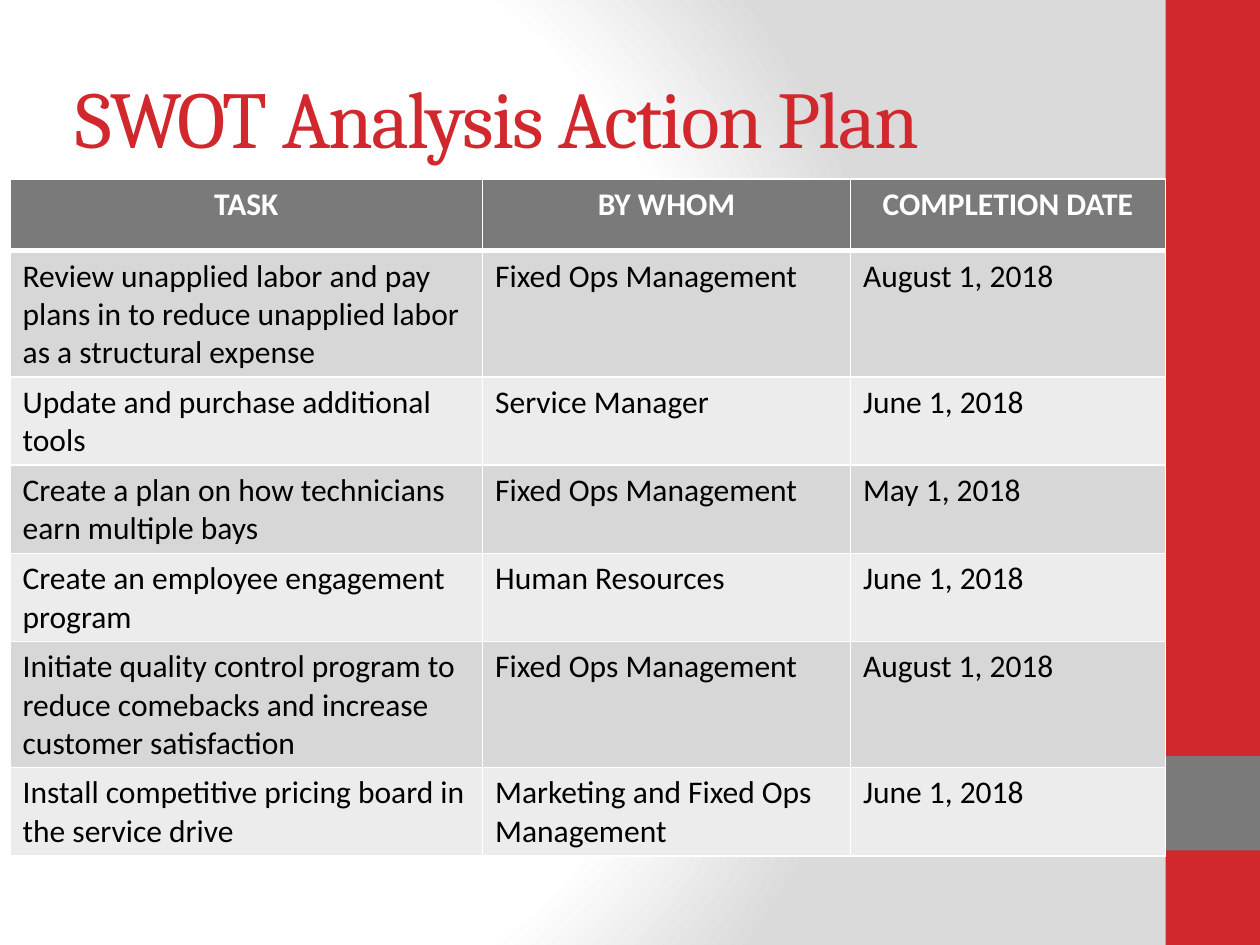
import pptx
import pptx.dml.color
import pptx.enum.shapes
import pptx.enum.text
import pptx.oxml
import pptx.oxml.ns
import pptx.util
from pptx.util import Inches

COLORS = {
    "red": "D1282E",
    "gray": "7A7A7A",
    "white": "FFFFFF",
    "black": "000000",
    "backdrop": "DADADA",
    "odd_row": "D7D7D7",
    "even_row": "ECECEC",
}
HEADERS = ["TASK", "BY WHOM", "COMPLETION DATE"]
ACTIONS = [
    ["Review unapplied labor and pay plans in to reduce unapplied labor as a structural expense",
     "Fixed Ops Management", "August 1, 2018"],
    ["Update and purchase additional tools", "Service Manager", "June 1, 2018"],
    ["Create a plan on how technicians earn multiple bays", "Fixed Ops Management", "May 1, 2018"],
    ["Create an employee engagement program", "Human Resources", "June 1, 2018"],
    ["Initiate quality control program to reduce comebacks and increase customer satisfaction",
     "Fixed Ops Management", "August 1, 2018"],
    ["Install competitive pricing board in the service drive",
     "Marketing and Fixed Ops Management", "June 1, 2018"],
]
COLUMN_WIDTHS = [3.75, 2.92, 2.5]
ROW_HEIGHT = 0.57
ALIGN = pptx.enum.text.PP_ALIGN


def rgb(name):
    return pptx.dml.color.RGBColor.from_string(COLORS[name])


def paint_background(slide):
    """Fill the background with a circular gradient centred left of the middle."""
    slide.background.fill.solid()
    solid = slide.element.find(".//" + pptx.oxml.ns.qn("a:solidFill"))
    stops = "".join(
        f'<a:gs pos="{position * 1000}"><a:srgbClr val="{COLORS[color]}"/></a:gs>'
        for position, color in [(0, "white"), (75, "white"), (100, "backdrop")]
    )
    gradient = pptx.oxml.parse_xml(
        f'<a:gradFill {pptx.oxml.ns.nsdecls("a")} rotWithShape="1"><a:gsLst>{stops}</a:gsLst>'
        '<a:path path="circle"><a:fillToRect l="20000" t="50000" r="100000" b="50000"/></a:path>'
        "</a:gradFill>"
    )
    solid.getparent().replace(solid, gradient)


def add_band(slide, top, height, color):
    band = slide.shapes.add_shape(
        pptx.enum.shapes.MSO_SHAPE.RECTANGLE,
        Inches(9.25), Inches(top), Inches(0.75), Inches(height))
    band.shadow.inherit = False
    band.fill.solid()
    band.fill.fore_color.rgb = rgb(color)
    band.line.fill.background()


def write_text(frame, text, *, font, size, color, bold=False, align=ALIGN.LEFT, spacing=None):
    """Write one formatted paragraph; spacing is between letters, in points."""
    frame.word_wrap = True
    para = frame.paragraphs[0]
    para.alignment = align
    span = para.add_run()
    span.text = text
    span.font.name = font
    span.font.size = pptx.util.Pt(size)
    span.font.bold = bold
    span.font.color.rgb = rgb(color)
    if spacing is not None:
        span.font._element.set("spc", str(spacing * 100))


def add_title(slide, text):
    box = slide.shapes.add_textbox(Inches(0.5), Inches(0.3), Inches(8.33), Inches(1.25))
    box.text_frame.vertical_anchor = pptx.enum.text.MSO_ANCHOR.MIDDLE
    write_text(box.text_frame, text, font="Cambria", size=46, color="red", spacing=-1)


def set_borders(cell, top, bottom):
    """Draw white borders; top and bottom are widths in points."""
    properties = cell._tc.get_or_add_tcPr()
    for index, (side, width) in enumerate([("L", 1), ("R", 1), ("T", top), ("B", bottom)]):
        properties.insert(index, pptx.oxml.parse_xml(
            f'<a:ln{side} {pptx.oxml.ns.nsdecls("a")} w="{pptx.util.Pt(width)}">'
            f'<a:solidFill><a:srgbClr val="{COLORS["white"]}"/></a:solidFill></a:ln{side}>'))


def add_action_table(slide):
    rows = [HEADERS] + ACTIONS
    table = slide.shapes.add_table(
        len(rows), len(HEADERS), Inches(0.08), Inches(1.42),
        Inches(sum(COLUMN_WIDTHS)), Inches(ROW_HEIGHT * len(rows))).table
    for column, width in zip(table.columns, COLUMN_WIDTHS):
        column.width = Inches(width)
    for row_index, texts in enumerate(rows):
        table.rows[row_index].height = Inches(ROW_HEIGHT)
        header = row_index == 0
        fill = "gray" if header else ("odd_row" if row_index % 2 else "even_row")
        for column_index, text in enumerate(texts):
            cell = table.cell(row_index, column_index)
            cell.fill.solid()
            cell.fill.fore_color.rgb = rgb(fill)
            set_borders(cell, top=3 if row_index == 1 else 1, bottom=3 if header else 1)
            write_text(cell.text_frame, text, font="Calibri", size=18, bold=header,
                       color="white" if header else "black",
                       align=ALIGN.CENTER if header else ALIGN.LEFT)


def main():
    deck = pptx.Presentation()
    deck.slide_width, deck.slide_height = Inches(10), Inches(7.5)
    slide = deck.slides.add_slide(deck.slide_layouts[6])
    paint_background(slide)
    add_band(slide, 0, 7.5, "red")
    add_band(slide, 6, 0.75, "gray")
    add_title(slide, "SWOT Analysis Action Plan")
    add_action_table(slide)
    deck.save("out.pptx")


if __name__ == "__main__":
    main()
